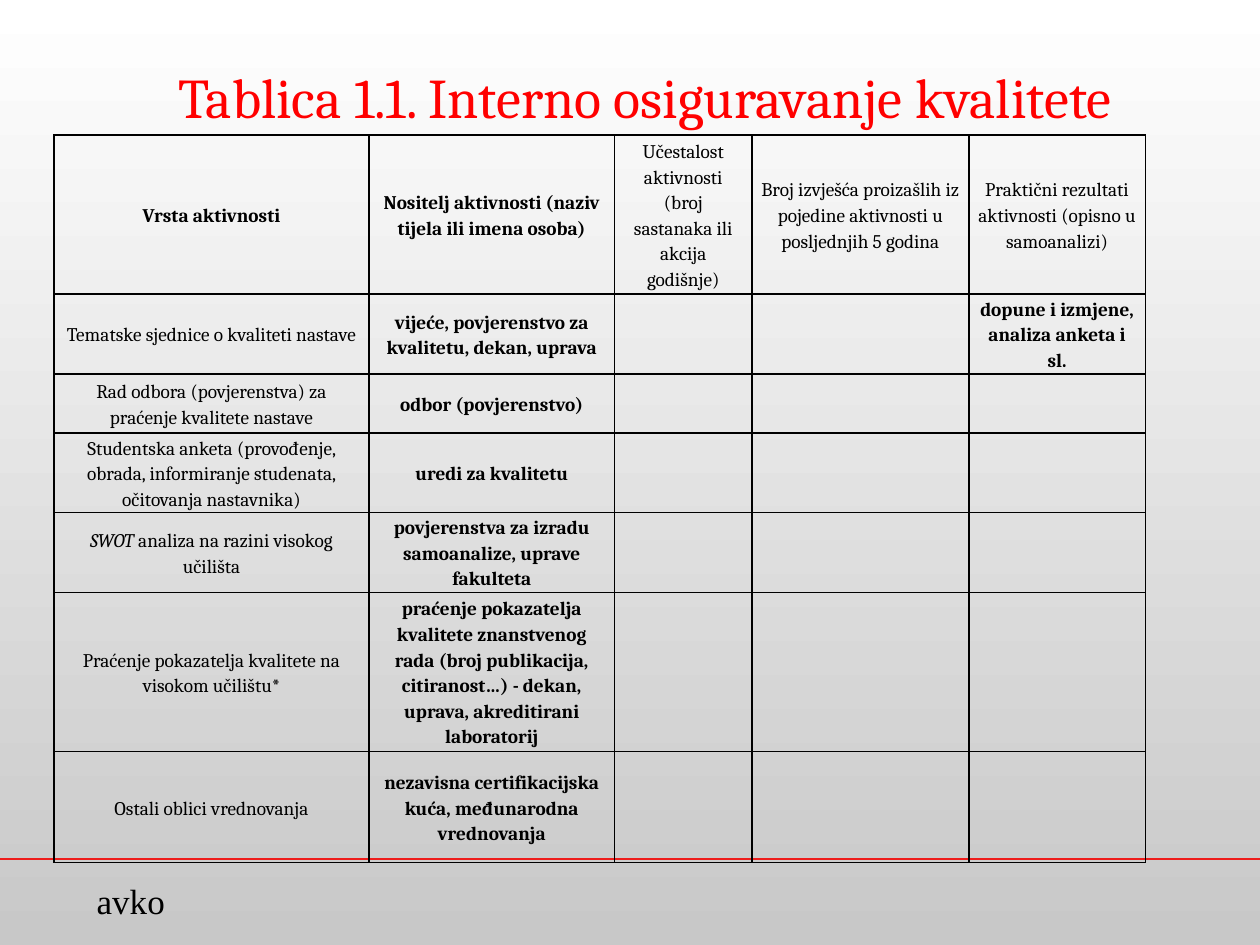
"""Build a slide with a table on internal quality assurance."""
from lxml import etree
from pptx import Presentation
from pptx.dml.color import RGBColor
from pptx.enum.shapes import MSO_CONNECTOR as CONN
from pptx.enum.text import MSO_ANCHOR as ANCHOR, PP_ALIGN as ALIGN
from pptx.oxml import parse_xml
from pptx.oxml.ns import nsdecls, qn
from pptx.util import Cm, Pt

COLS = [6.35, 4.95, 2.77, 4.37, 3.56]
ROWS = [3.12, 1.47, 1.19, 1.47, 1.47, 3, 2.24]
BOLD = {(0, 0), (1, 4)}
CELLS = [
    ["Vrsta aktivnosti", "Nositelj aktivnosti (naziv tijela ili imena osoba)",
     "Učestalost aktivnosti (broj sastanaka ili akcija godišnje)",
     "Broj izvješća proizašlih iz pojedine aktivnosti u posljednjih 5 godina",
     "Praktični rezultati aktivnosti (opisno u samoanalizi)"],
    ["Tematske sjednice o kvaliteti nastave",
     "vijeće, povjerenstvo za kvalitetu, dekan, uprava", "", "",
     "dopune i izmjene, analiza anketa i sl."],
    ["Rad odbora (povjerenstva) za praćenje kvalitete nastave",
     "odbor (povjerenstvo)", "", "", ""],
    ["Studentska anketa (provođenje, obrada, informiranje studenata, "
     "očitovanja nastavnika)", "uredi za kvalitetu", "", "", ""],
    ["_SWOT_ analiza na razini visokog učilišta",
     "povjerenstva za izradu samoanalize, uprave fakulteta", "", "", ""],
    ["Praćenje pokazatelja kvalitete na visokom učilištu*",
     "praćenje pokazatelja kvalitete znanstvenog rada (broj publikacija, "
     "citiranost…) - dekan, uprava, akreditirani laboratorij", "", "", ""],
    ["Ostali oblici vrednovanja",
     "nezavisna certifikacijska kuća, međunarodna vrednovanja", "", "", ""],
]


def rgb(value):
    return RGBColor.from_string(value)


class Deck:
    """Hold the style and the current slide."""

    font, ink, accent, rule = "Cambria", "000000", "FF0000", "EE1C1B"

    def __init__(self):
        self.prs = Presentation()
        self.prs.slide_width, self.prs.slide_height = Cm(25.4), Cm(19.05)
        self.s = self.prs.slides.add_slide(self.prs.slide_layouts[5])

    def background(self, *colors):
        fill = self.s.background.fill
        fill.gradient()
        fill.gradient_angle = 270
        for stop, color in zip(fill.gradient_stops, colors):
            stop.color.rgb = rgb(color)

    def style(self, p, size, color, name=None, bold=False):
        f = p.font
        f.size, f.name, f.bold = Pt(size), name or self.font, bold
        f.color.rgb = rgb(color)

    def title(self, text, x, y, w, h):
        sp = self.s.shapes.title
        sp.left, sp.top, sp.width, sp.height = Cm(x), Cm(y), Cm(w), Cm(h)
        tf = sp.text_frame
        tf.text, tf.vertical_anchor = text, ANCHOR.MIDDLE
        p = tf.paragraphs[0]
        p.alignment = ALIGN.CENTER
        self.style(p, 32, self.accent)

    def label(self, text, x, y, w, h):
        sp = self.s.shapes.add_textbox(Cm(x), Cm(y), Cm(w), Cm(h))
        tf = sp.text_frame
        tf.text, tf.word_wrap = text, True
        self.style(tf.paragraphs[0], 20, self.ink, "Times New Roman")

    def line(self, x1, y1, x2, y2):
        cx = self.s.shapes.add_connector(
            CONN.STRAIGHT, Cm(x1), Cm(y1), Cm(x2), Cm(y2))
        cx.line.color.rgb, cx.line.width = rgb(self.rule), Pt(1)
        etree.SubElement(cx._element.spPr, qn("a:effectLst"))

    def borders(self, cell):
        tc_pr = cell._tc.get_or_add_tcPr()
        for side in "LRTB":
            tc_pr.append(parse_xml(
                f'<a:ln{side} {nsdecls("a")} w="12700"><a:solidFill>'
                f'<a:srgbClr val="{self.ink}"/></a:solidFill></a:ln{side}>'))

    def cell(self, cell, text, bold):
        self.borders(cell)
        cell.fill.background()
        cell.vertical_anchor = ANCHOR.MIDDLE
        cell.margin_left = cell.margin_right = Cm(0.18)
        cell.margin_top = cell.margin_bottom = 0
        p = cell.text_frame.paragraphs[0]
        p.alignment, p.line_spacing, p.space_after = ALIGN.CENTER, 1.15, Pt(10)
        self.style(p, 11, self.ink, bold=bold)
        for i, part in enumerate(text.split("_")):
            if part:
                r = p.add_run()
                r.text = part
                if i % 2:
                    r.font.italic = True

    def table(self, x, y, cols, rows, cells):
        tbl = self.s.shapes.add_table(
            len(rows), len(cols), Cm(x), Cm(y),
            Cm(sum(cols)), Cm(sum(rows))).table
        tbl.first_row = tbl.horz_banding = False
        for col, width in zip(tbl.columns, cols):
            col.width = Cm(width)
        for i, (row, height) in enumerate(zip(tbl.rows, rows)):
            row.height = Cm(height)
            for j, text in enumerate(cells[i]):
                self.cell(tbl.cell(i, j), text, j == 1 or (i, j) in BOLD)


def main():
    deck = Deck()
    deck.background("FFFFFF", "C8C8C8")
    deck.line(0, 17.32, 25.4, 17.32)
    deck.label("avko", 1.7, 17.6, 2.2, 1.1)
    deck.title("Tablica 1.1. Interno osiguravanje kvalitete",
               1.9, 0.76, 22.23, 2.36)
    deck.table(1.09, 2.72, COLS, ROWS, CELLS)
    deck.prs.save("out.pptx")


if __name__ == "__main__":
    main()
